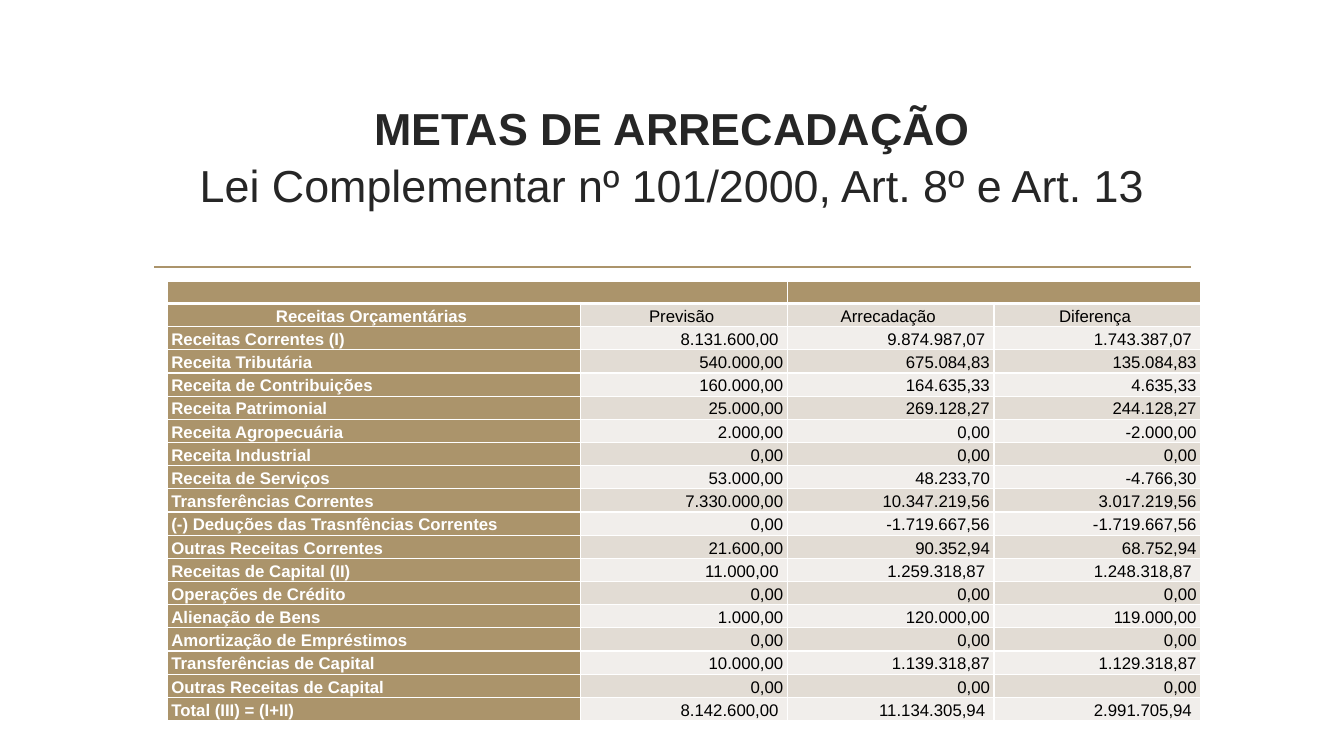
import pptx
import pptx.util
import pptx.dml.color
import pptx.enum.shapes
import pptx.enum.text
import pptx.oxml
import pptx.oxml.ns
from pptx.util import Inches

ALIGN = pptx.enum.text.PP_ALIGN
MIDDLE = pptx.enum.text.MSO_ANCHOR.MIDDLE
FONT = "Arial"
COLORS = {
    "gold": "AB946B",
    "band_dark": "E2DCD4",
    "band_light": "F1EEEB",
    "title": "262626",
    "white": "FFFFFF",
    "black": "000000",
}
TITLE_LINES = ("METAS DE ARRECADAÇÃO", "Lei Complementar nº 101/2000, Art. 8º e Art. 13")
COLUMN_WIDTHS = (4.1, 2.05, 2.05, 2.05)
HEADINGS = ("Receitas Orçamentárias ", "Previsão ", "Arrecadação ", "Diferença ")
REVENUES = (
    ("Receitas Correntes (I)", "8.131.600,00 ", "9.874.987,07 ", "1.743.387,07 "),
    ("Receita Tributária", "540.000,00", "675.084,83", "135.084,83"),
    ("Receita de Contribuições", "160.000,00", "164.635,33", "4.635,33"),
    ("Receita Patrimonial", "25.000,00", "269.128,27", "244.128,27"),
    ("Receita Agropecuária", "2.000,00", "0,00", "-2.000,00"),
    ("Receita Industrial", "0,00", "0,00", "0,00"),
    ("Receita de Serviços", "53.000,00", "48.233,70", "-4.766,30"),
    ("Transferências Correntes", "7.330.000,00", "10.347.219,56", "3.017.219,56"),
    ("(-) Deduções das Trasnfências Correntes", "0,00", "-1.719.667,56", "-1.719.667,56"),
    ("Outras Receitas Correntes", "21.600,00", "90.352,94", "68.752,94"),
    ("Receitas de Capital (II)", "11.000,00 ", "1.259.318,87 ", "1.248.318,87 "),
    ("Operações de Crédito", "0,00", "0,00", "0,00"),
    ("Alienação de Bens", "1.000,00", "120.000,00", "119.000,00"),
    ("Amortização de Empréstimos", "0,00", "0,00", "0,00"),
    ("Transferências de Capital", "10.000,00", "1.139.318,87", "1.129.318,87"),
    ("Outras Receitas de Capital", "0,00", "0,00", "0,00"),
    ("Total (III) = (I+II)", "8.142.600,00 ", "11.134.305,94 ", "2.991.705,94 "),
)


def rgb(name):
    return pptx.dml.color.RGBColor.from_string(COLORS[name])


def write(paragraph, text, size=12, color="black", bold=False, align=ALIGN.LEFT, spacing=1.15):
    paragraph.alignment = align
    paragraph.line_spacing = spacing
    run = paragraph.add_run()
    run.text = text
    run.font.name = FONT
    run.font.size = pptx.util.Pt(size)
    run.font.bold = bold
    run.font.color.rgb = rgb(color)


def add_title(slide):
    title = slide.shapes.title
    title.left, title.top = Inches(1.42), Inches(1.07)
    title.width, title.height = Inches(10.5), Inches(1.43)
    frame = title.text_frame
    frame.word_wrap = True
    frame.auto_size = pptx.enum.text.MSO_AUTO_SIZE.NONE
    frame.vertical_anchor = MIDDLE
    frame.margin_bottom = Inches(0.55)
    paragraph = frame.paragraphs[0]
    heading, law = TITLE_LINES
    look = dict(size=32, color="title", align=ALIGN.CENTER, spacing=1.05)
    write(paragraph, heading, bold=True, **look)
    paragraph.add_line_break()
    write(paragraph, law, **look)


def add_rule(slide):
    rule = slide.shapes.add_connector(
        pptx.enum.shapes.MSO_CONNECTOR.STRAIGHT,
        Inches(1.53), Inches(2.65), Inches(11.81), Inches(2.65))
    rule.line.color.rgb = rgb("gold")
    rule.line.width = pptx.util.Pt(1.25)
    pptx.oxml.ns.qn("a:effectLst")
    rule._element.spPr.append(pptx.oxml.parse_xml(
        f'<a:effectLst {pptx.oxml.ns.nsdecls("a")}/>'))


def style_cell(cell, fill, bottom=1):
    """Fill a cell and give it white borders, widths in points."""
    cell.fill.solid()
    cell.fill.fore_color.rgb = rgb(fill)
    cell.vertical_anchor = MIDDLE
    cell.margin_left = cell.margin_right = Inches(0.04)
    cell.margin_top = cell.margin_bottom = pptx.util.Pt(0.45)
    properties = cell._tc.get_or_add_tcPr()
    for place, (side, width) in enumerate((("L", 1), ("R", 1), ("T", 1), ("B", bottom))):
        properties.insert(place, pptx.oxml.parse_xml(
            f'<a:ln{side} {pptx.oxml.ns.nsdecls("a")} w="{pptx.util.Pt(width)}">'
            f'<a:solidFill><a:srgbClr val="{COLORS["white"]}"/></a:solidFill></a:ln{side}>'))


def add_banner(table):
    """Style the empty top row, joined in two halves."""
    for cell in table.rows[0].cells:
        style_cell(cell, "gold", bottom=3)
        cell.text_frame.paragraphs[0]._p.append(pptx.oxml.parse_xml(
            f'<a:endParaRPr {pptx.oxml.ns.nsdecls("a")} sz="1000"/>'))
    for first in (0, 2):
        table.cell(0, first).merge(table.cell(0, first + 1))


def add_revenue_table(slide):
    rows = (HEADINGS,) + REVENUES
    table = slide.shapes.add_table(
        len(rows) + 1, len(COLUMN_WIDTHS), Inches(1.66), Inches(2.79),
        Inches(sum(COLUMN_WIDTHS)), Inches(4.4)).table
    for column, width in zip(table.columns, COLUMN_WIDTHS):
        column.width = Inches(width)
    for row in table.rows:
        row.height = Inches(0.23)
    table.rows[0].height = Inches(0.22)
    add_banner(table)
    for row_number, values in enumerate(rows, start=1):
        band = "band_dark" if row_number % 2 else "band_light"
        for column_number, value in enumerate(values):
            is_label = column_number == 0
            if row_number == 1:
                align = ALIGN.CENTER
            else:
                align = ALIGN.LEFT if is_label else ALIGN.RIGHT
            cell = table.cell(row_number, column_number)
            style_cell(cell, "gold" if is_label else band)
            write(cell.text_frame.paragraphs[0], value, bold=is_label,
                  color="white" if is_label else "black", align=align)


def main():
    presentation = pptx.Presentation()
    presentation.slide_width = Inches(13.33)
    presentation.slide_height = Inches(7.5)
    slide = presentation.slides.add_slide(presentation.slide_layouts[5])
    add_rule(slide)
    add_title(slide)
    add_revenue_table(slide)
    presentation.save("out.pptx")


if __name__ == "__main__":
    main()
